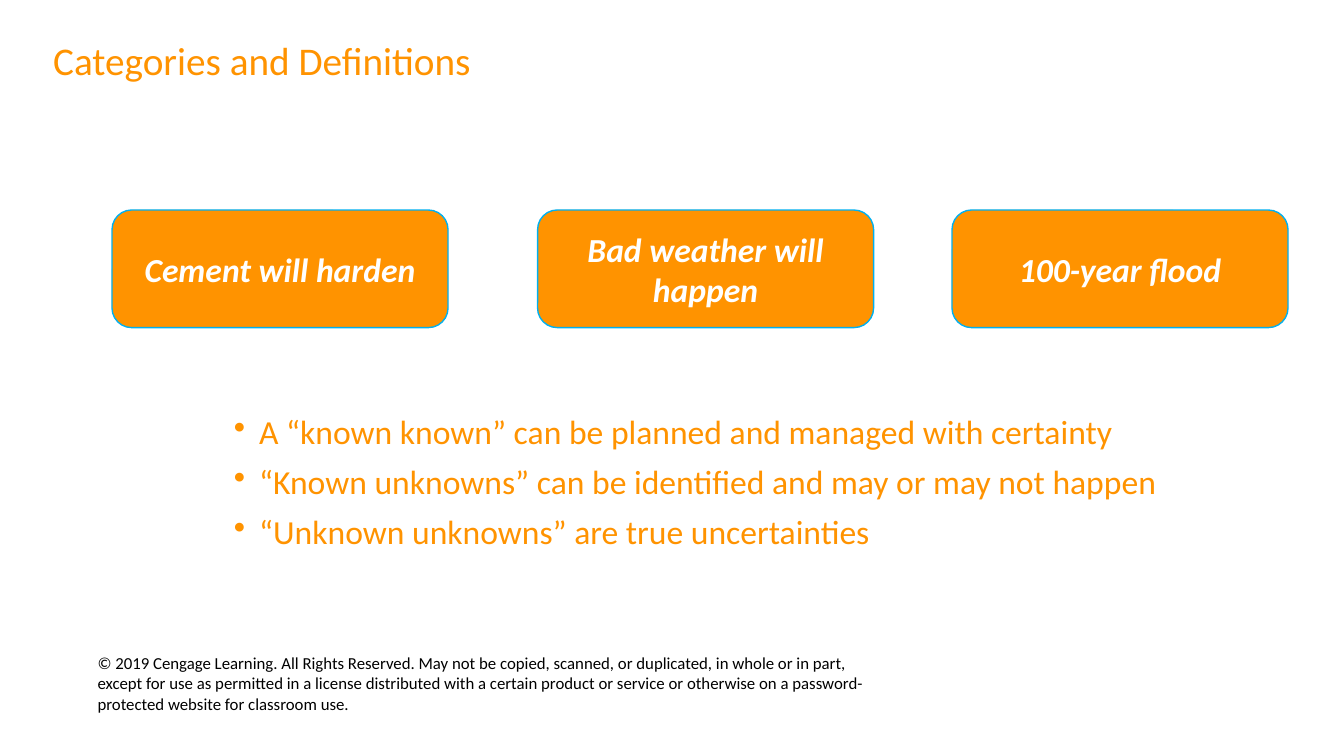
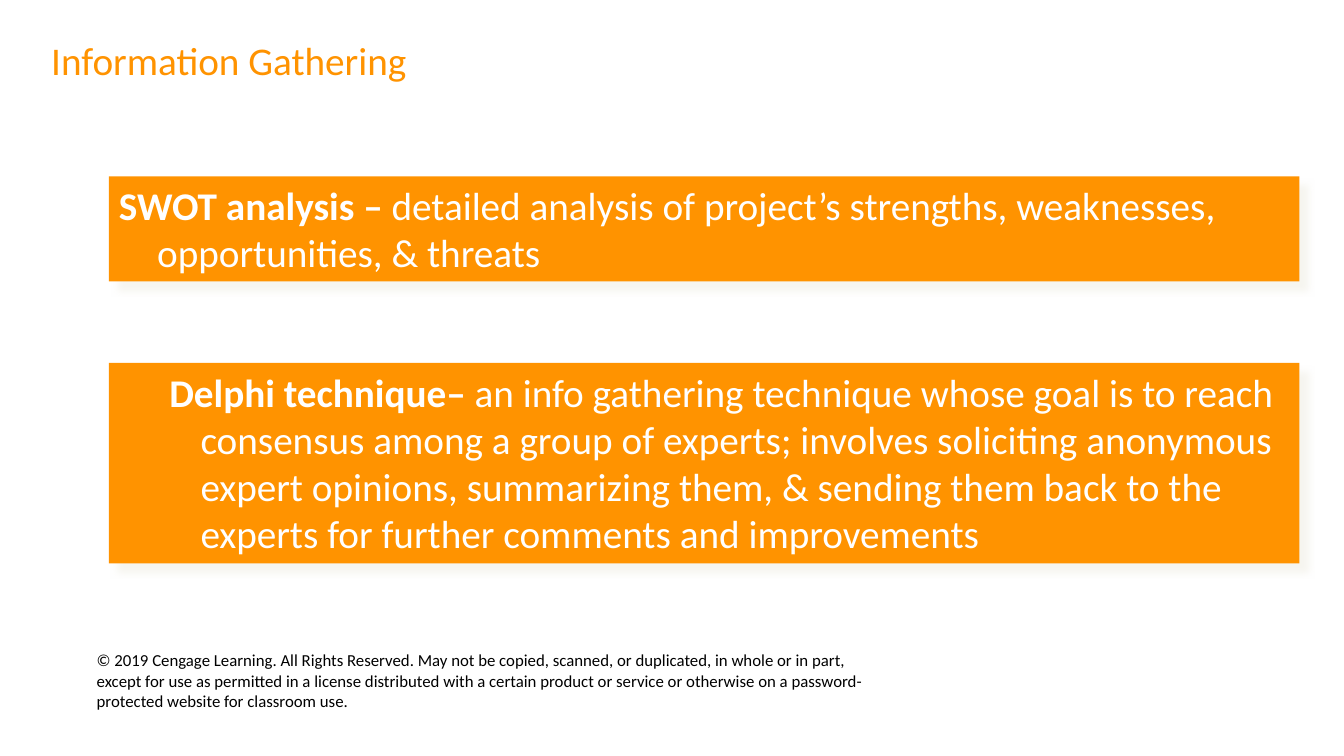
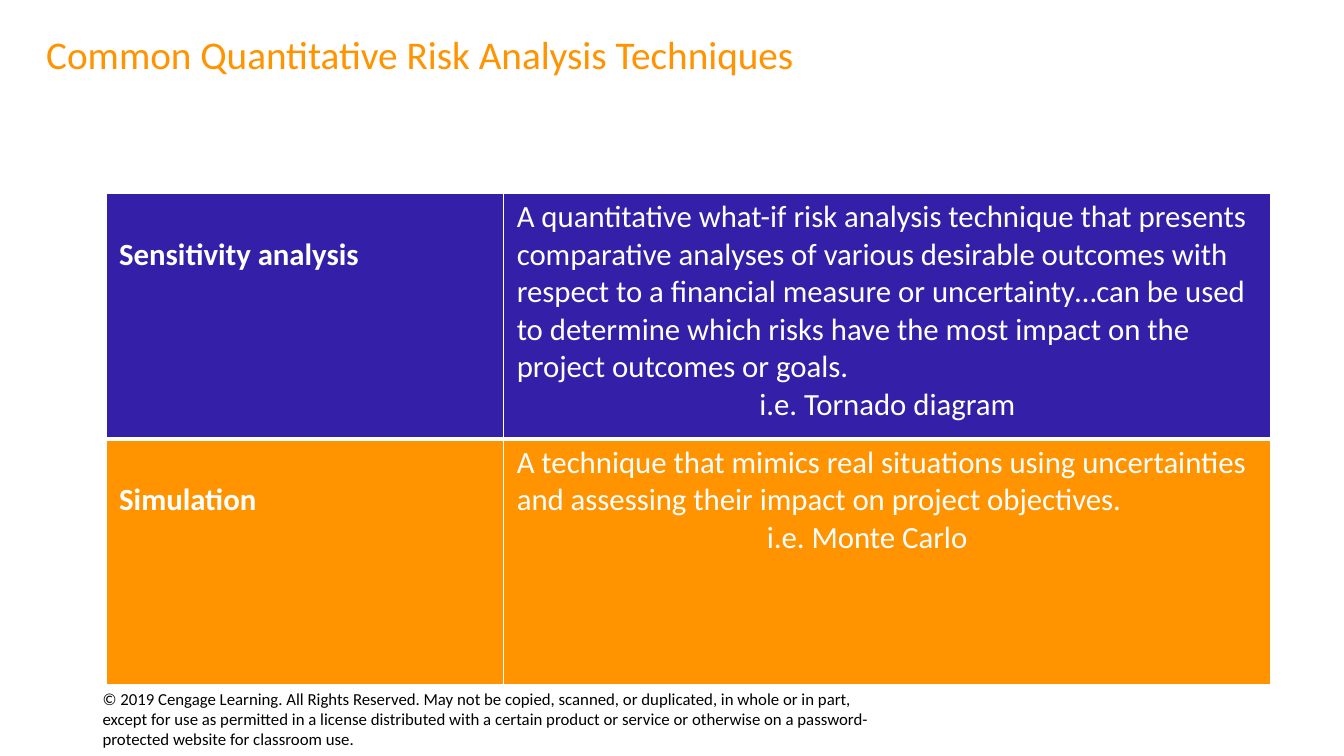
from lxml.etree import SubElement
from pptx import Presentation
from pptx.dml.color import RGBColor
from pptx.enum.shapes import MSO_SHAPE
from pptx.enum.text import MSO_ANCHOR, PP_ALIGN
from pptx.oxml import parse_xml
from pptx.oxml.ns import nsdecls, qn
from pptx.util import Inches, Pt

ORANGE, INDIGO, CYAN = "FF9300", "331FA8", "00B0F0"
WHITE, BLACK, CREAM = "FFFFFF", "000000", "EEECE1"
FONT = "Calibri"
FOOTER = (
    "© 2019 Cengage Learning. All Rights Reserved. May not be copied, scanned, "
    "or duplicated, in whole or in part, except for use as permitted in a license "
    "distributed with a certain product or service or otherwise on a "
    "password-protected website for classroom use."
)
color = RGBColor.from_string

presentation = Presentation()
presentation.slide_width = Inches(13.33)
presentation.slide_height = Inches(7.5)

# Grid: 48 columns by 36 rows
COLUMN = presentation.slide_width / 48
ROW = presentation.slide_height / 36


def add_box(slide, left, top, width, height, kind=None, fill=ORANGE, line=None):
    """Add a text box, or a filled shape of the given kind, placed on the grid."""
    place = [int(left * COLUMN), int(top * ROW), int(width * COLUMN), int(height * ROW)]
    if kind is None:
        shape = slide.shapes.add_textbox(*place)
    else:
        shape = slide.shapes.add_shape(kind, *place)
        shape.shadow.inherit = False
        shape.fill.solid()
        shape.fill.fore_color.rgb = color(fill)
        if line:
            shape.line.color.rgb = color(line)
            shape.line.width = Pt(1)
        else:
            shape.line.fill.background()
    shape.text_frame.word_wrap = True
    return shape


def write(frame, text, size=24, ink=WHITE, lead="", bold=False, italic=False,
          align=PP_ALIGN.LEFT, margin=0, indent=0, spacing=1, before=0, bullet=None):
    """Write one paragraph; lead is a bold opening, margin and indent are inches."""
    paragraph = frame.paragraphs[0]
    if paragraph.runs:
        paragraph = frame.add_paragraph()
        paragraph.space_before = Pt(before)
    paragraph.alignment = align
    paragraph.line_spacing = spacing
    properties = paragraph._p.get_or_add_pPr()
    properties.set("marL", str(Inches(margin)))
    properties.set("indent", str(Inches(indent)))
    if bullet:
        SubElement(properties, qn("a:buChar")).set("char", bullet)
    for part, weight in ((lead, True), (text, bold)):
        if part:
            run = paragraph.add_run()
            run.text = part
            run.font.name = FONT
            run.font.size = Pt(size)
            run.font.bold = weight
            run.font.italic = italic
            run.font.color.rgb = color(ink)


# Title and footer of every slide: title, its box, footer box
frames = [
    ("Categories and Definitions", (1.44, 0, 37.2, 6), (3.13, 30.86, 29, 4.4)),
    ("Information Gathering", (1.37, 0, 36.8, 6), (3.1, 30.72, 29, 4.56)),
    ("Common Quantitative Risk Analysis Techniques",
     (1.19, 0, 41.4, 5.42), (3.31, 32.54, 28.77, 2.74)),
]
slides = []
for title, title_place, footer_place in frames:
    slide = presentation.slides.add_slide(presentation.slide_layouts[6])
    title_box = add_box(slide, *title_place)
    title_box.text_frame.vertical_anchor = MSO_ANCHOR.MIDDLE
    write(title_box.text_frame, title, size=28, ink=ORANGE, margin=0.03, spacing=0.9)
    write(add_box(slide, *footer_place).text_frame, FOOTER, size=12, ink=BLACK)
    slides.append(slide)
categories, gathering, techniques = slides

# Slide 1: example cards above their definitions
for left, example in (
    (4, "Cement will harden"),
    (19.2, "Bad weather will happen"),
    (34, "100-year flood"),
):
    card = add_box(categories, left, 10, 12, 5.6, MSO_SHAPE.ROUNDED_RECTANGLE, line=CYAN)
    card.text_frame.vertical_anchor = MSO_ANCHOR.MIDDLE
    write(card.text_frame, example, bold=True, italic=True, align=PP_ALIGN.CENTER)

definitions = add_box(categories, 8, 19.54, 37.6, 10)
for definition in (
    "A “known known” can be planned and managed with certainty",
    "“Known unknowns” can be identified and may or may not happen",
    "“Unknown unknowns” are true uncertainties",
):
    write(definitions.text_frame, definition, ink=ORANGE, margin=0.25, indent=-0.25,
          spacing=0.9, before=10, bullet="•")

# Slide 2: panels with a soft shadow
for top, height, margin, indent, term, meaning in (
    (8.4, 5, 0.38, -0.38, "SWOT analysis – ",
     "detailed analysis of project’s strengths, weaknesses, opportunities, & threats"),
    (17.28, 9.55, 0.81, -0.31, "Delphi technique– ",
     "an info gathering technique whose goal is to reach consensus among a group of "
     "experts; involves soliciting anonymous expert opinions, summarizing them, & "
     "sending them back to the experts for further comments and improvements"),
):
    panel = add_box(gathering, 3.89, top, 42.52, height, MSO_SHAPE.RECTANGLE)
    panel.text_frame.vertical_anchor = MSO_ANCHOR.TOP
    write(panel.text_frame, meaning, size=28, lead=term, margin=margin, indent=indent)
    panel._element.spPr.find(qn("a:effectLst")).append(parse_xml(
        f'<a:outerShdw {nsdecls("a")} blurRad="{Pt(5)}" dist="{Pt(8.5)}" dir="2700000" '
        f'algn="tl" rotWithShape="0"><a:srgbClr val="{CREAM}"><a:alpha val="50000"/>'
        '</a:srgbClr></a:outerShdw>'))

# Slide 3: table of techniques
rows = [
    (INDIGO, "Sensitivity analysis",
     "A quantitative what-if risk analysis technique that presents comparative analyses "
     "of various desirable outcomes with respect to a financial measure or "
     "uncertainty…can be used to determine which risks have the most impact on the "
     "project outcomes or goals.",
     "i.e. Tornado diagram", {"align": PP_ALIGN.CENTER}),
    (ORANGE, "Simulation",
     "A technique that mimics real situations using uncertainties and assessing their "
     "impact on project objectives.",
     "i.e. Monte Carlo", {"margin": 2.48}),
]
table = techniques.shapes.add_table(
    len(rows), 2, int(3.79 * COLUMN), int(9.22 * ROW),
    int(41.6 * COLUMN), int(23.36 * ROW)).table
table.first_row = table.horz_banding = False
for column, share in zip(table.columns, (14.2, 27.4)):
    column.width = int(share * COLUMN)

for index, (fill, name, meaning, example, example_format) in enumerate(rows):
    name_cell, meaning_cell = table.rows[index].cells
    for cell in (name_cell, meaning_cell):
        cell.fill.solid()
        cell.fill.fore_color.rgb = color(fill)
        cell.margin_left = cell.margin_right = Inches(0.13)
        cell.margin_top = cell.margin_bottom = Inches(0.05)
        # White borders, thicker between the two rows
        inner_side = ("lnB", "lnT")[index]
        for position, side in enumerate(("lnL", "lnR", "lnT", "lnB")):
            width = Pt(3 if side == inner_side else 1)
            cell._tc.get_or_add_tcPr().insert(position, parse_xml(
                f'<a:{side} {nsdecls("a")} w="{width}"><a:solidFill>'
                f'<a:srgbClr val="{WHITE}"/></a:solidFill></a:{side}>'))
    name_cell.margin_top = Inches(0.42)
    write(name_cell.text_frame, name, size=22, bold=True)
    write(meaning_cell.text_frame, meaning, size=22)
    write(meaning_cell.text_frame, example, size=22, **example_format)

presentation.save("out.pptx")
